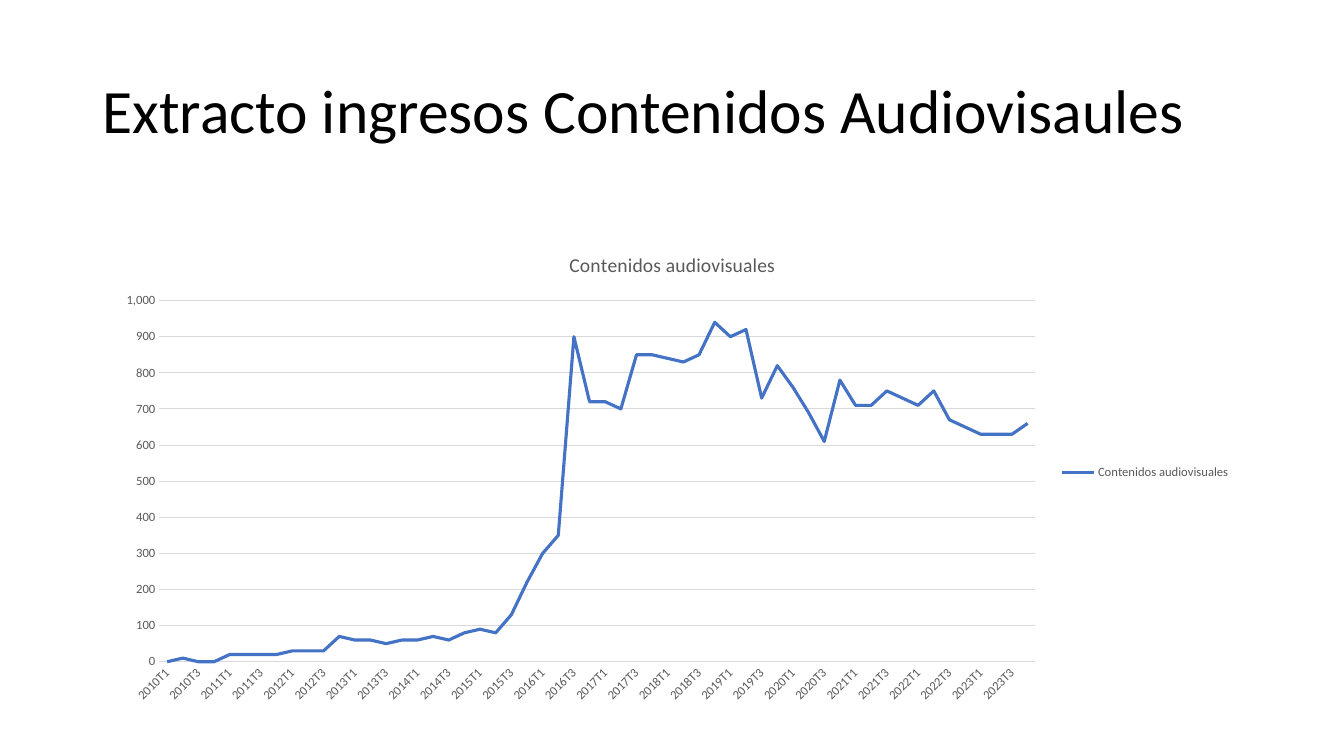
import pptx
import pptx.chart.data
import pptx.dml.color
import pptx.enum.chart
import pptx.enum.text
import pptx.util
from pptx.util import Pt

TITLE = "Extracto ingresos Contenidos Audiovisaules"
SERIES_NAME = "Contenidos audiovisuales"
INCOME_BY_YEAR = {
    2010: (0, 10, 0, 0),
    2011: (20, 20, 20, 20),
    2012: (30, 30, 30, 70),
    2013: (60, 60, 50, 60),
    2014: (60, 70, 60, 80),
    2015: (90, 80, 130, 220),
    2016: (300, 350, 900, 720),
    2017: (720, 700, 850, 850),
    2018: (840, 830, 850, 940),
    2019: (900, 920, 730, 820),
    2020: (760, 690, 610, 780),
    2021: (710, 710, 750, 730),
    2022: (710, 750, 670, 650),
    2023: (630, 630, 630, 660),
}
THEME = {
    "font": "Calibri",
    "black": "000000",
    "label": "595959",
    "grid": "D9D9D9",
    "series": "4472C4",
    "title_size": 44,
    "chart_title_size": 14,
    "chart_size": 10,
    "label_size": 9,
    "grid_width": 0.75,
    "series_width": 2.25,
}
PAGE_SIZE = (960, 540)
TITLE_BOX = (66, 28.75, 828, 104.4)
CHART_BOX = (74.2, 166.3, 812, 342.7)


def set_font(font, size, color):
    font.name = THEME["font"]
    font.size = Pt(THEME[size])
    font.bold = False
    font.color.rgb = pptx.dml.color.RGBColor.from_string(THEME[color])


def set_line(line, color, width):
    line.color.rgb = pptx.dml.color.RGBColor.from_string(THEME[color])
    line.width = Pt(THEME[width])


def add_title(page):
    box = page.shapes.add_textbox(*map(Pt, TITLE_BOX))
    frame = box.text_frame
    frame.word_wrap = True
    frame.vertical_anchor = pptx.enum.text.MSO_ANCHOR.MIDDLE
    para = frame.paragraphs[0]
    para.text = TITLE
    para.line_spacing = 0.9
    set_font(para.font, "title_size", "black")


def add_income_chart(page):
    data = pptx.chart.data.CategoryChartData()
    data.categories = [
        f"{year}T{quarter}"
        for year, incomes in INCOME_BY_YEAR.items()
        for quarter in range(1, len(incomes) + 1)
    ]
    data.add_series(SERIES_NAME, [v for incomes in INCOME_BY_YEAR.values() for v in incomes])
    chart = page.shapes.add_chart(
        pptx.enum.chart.XL_CHART_TYPE.LINE, *map(Pt, CHART_BOX), data
    ).chart
    set_font(chart.font, "chart_size", "black")

    chart.has_title = True
    para = chart.chart_title.text_frame.paragraphs[0]
    para.text = SERIES_NAME
    set_font(para.font, "chart_title_size", "label")
    chart.chart_title.include_in_layout = False

    chart.has_legend = True
    chart.legend.position = pptx.enum.chart.XL_LEGEND_POSITION.RIGHT
    chart.legend.include_in_layout = False
    set_font(chart.legend.font, "label_size", "label")

    plot = chart.plots[0]
    plot.vary_by_categories = False
    series = plot.series[0]
    series.smooth = False
    series.marker.style = pptx.enum.chart.XL_MARKER_STYLE.NONE
    set_line(series.format.line, "series", "series_width")

    for axis in (chart.category_axis, chart.value_axis):
        axis.major_tick_mark = pptx.enum.chart.XL_TICK_MARK.NONE
        axis.minor_tick_mark = pptx.enum.chart.XL_TICK_MARK.NONE
        set_font(axis.tick_labels.font, "label_size", "label")

    quarters = chart.category_axis
    set_line(quarters.format.line, "grid", "grid_width")
    # Labels slant upwards by 45 degrees, in 60000ths of a degree.
    quarters._element.txPr.bodyPr.set("rot", str(-45 * 60000))

    incomes = chart.value_axis
    incomes.minimum_scale, incomes.maximum_scale, incomes.major_unit = 0, 1000, 100
    incomes.tick_labels.number_format = "#,##0"
    incomes.tick_labels.number_format_is_linked = False
    incomes.format.line.fill.background()
    set_line(incomes.major_gridlines.format.line, "grid", "grid_width")


def main():
    deck = pptx.Presentation()
    deck.slide_width, deck.slide_height = map(Pt, PAGE_SIZE)
    page = deck.slides.add_slide(deck.slide_layouts[6])
    add_title(page)
    add_income_chart(page)
    deck.save("out.pptx")


if __name__ == "__main__":
    main()
